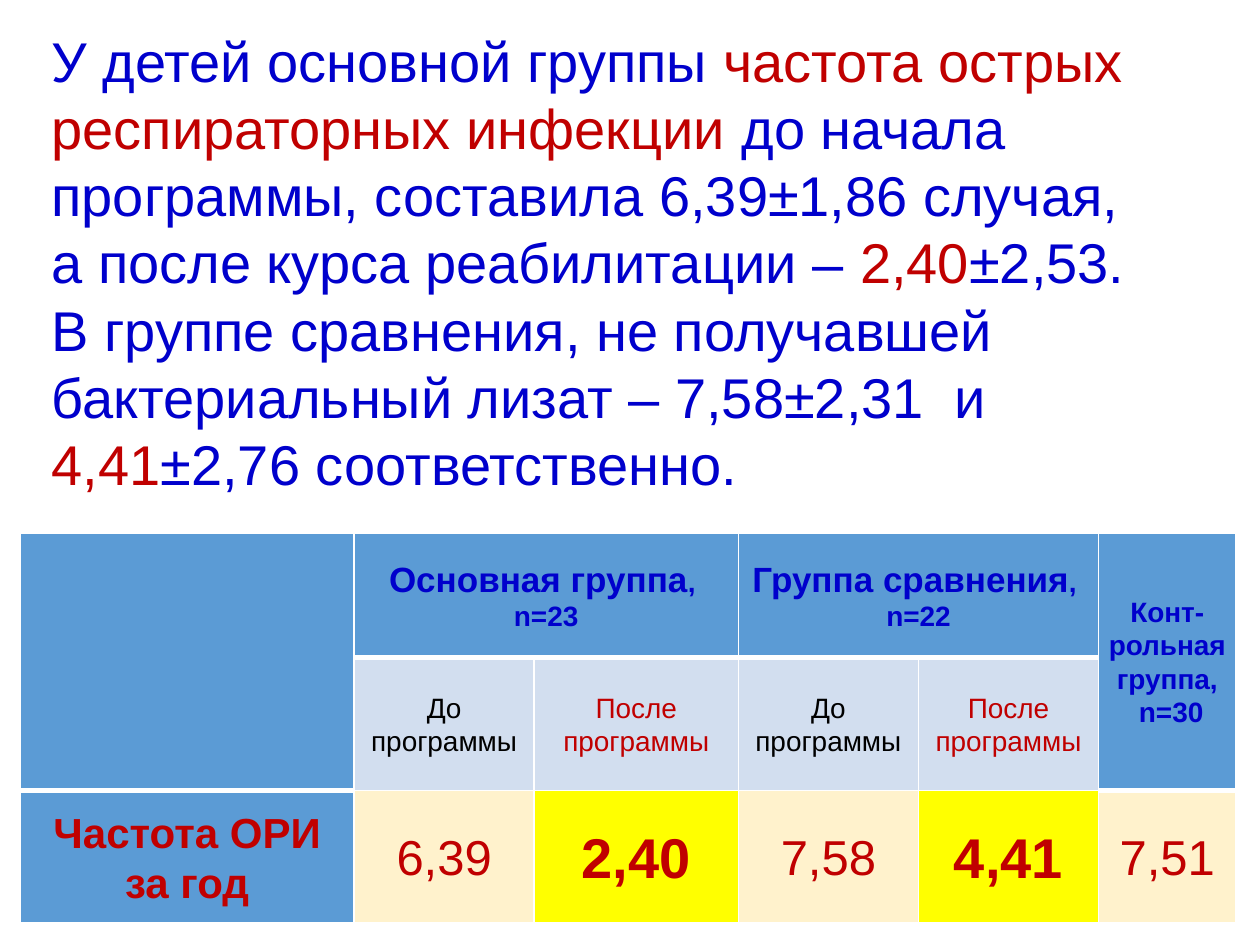
from dataclasses import dataclass

from lxml import etree
from pptx import Presentation
from pptx import util as u
from pptx.dml.color import RGBColor
from pptx.enum import text
from pptx.oxml import ns


@dataclass(frozen=True)
class Theme:
    """Colours, font and type sizes of the slide."""
    font: str = "Arial"
    blue: str = "0000CC"
    red: str = "C00000"
    black: str = "000000"
    white: str = "FFFFFF"
    header: str = "5B9BD5"
    subheader: str = "D2DEEF"
    value: str = "FFF2CC"
    highlight: str = "FFFF00"
    body: int = 32
    strong: int = 32
    number: int = 28
    label: int = 24
    group: int = 20
    small: int = 16


THEME = Theme()


def apply(target, values):
    """Set attributes of an object from a dict."""
    for name, value in values.items():
        setattr(target, name, value)


def add_span(para, words, size, color, bold=False):
    """Add one formatted run to a paragraph."""
    span = para.add_run()
    span.text = words
    apply(span.font, {"name": THEME.font, "size": u.Pt(size), "bold": bold})
    span.font.color.rgb = RGBColor.from_string(color)


def fill_frame(frame, paragraphs, para_format):
    """Write paragraphs, each a list of run arguments, into a text frame."""
    for index, spans in enumerate(paragraphs):
        para = frame.add_paragraph() if index else frame.paragraphs[0]
        apply(para, para_format)
        for span in spans:
            add_span(para, *span)


def add_summary(page):
    """Add the text box with the findings."""
    def blue(words):
        return words, THEME.body, THEME.blue

    def red(words):
        return words, THEME.body, THEME.red

    box = page.shapes.add_textbox(u.Inches(0.31), u.Inches(0.16), u.Inches(9.52), u.Inches(3.87))
    apply(box.text_frame, {"word_wrap": True, "auto_size": text.MSO_AUTO_SIZE.SHAPE_TO_FIT_TEXT})
    fill_frame(box.text_frame, [
        [blue("У детей основной группы "), red("частота острых респираторных инфекции "),
         blue("до начала программы, составила 6,39±1,86 случая,")],
        [blue("а после курса реабилитации – "), red("2,40"), blue("±2,53.")],
        [blue("В группе сравнения, не получавшей бактериальный лизат – 7,58±2,31  и "),
         red("4,41"), blue("±2,76 соответственно.")],
    ], {})


def add_borders(cell, bottom):
    """Draw white borders round a cell, placed before its fill."""
    properties = cell._tc.get_or_add_tcPr()
    for index, side in enumerate("LRTB"):
        width = u.Pt(bottom if side == "B" else 1)
        line = etree.Element(ns.qn(f"a:ln{side}"), w=str(int(width)))
        solid = etree.SubElement(line, ns.qn("a:solidFill"))
        etree.SubElement(solid, ns.qn("a:srgbClr"), val=THEME.white)
        properties.insert(index, line)


def style_cell(cell, fill, bottom=1):
    """Set the fill, margins, anchor and borders of a cell."""
    apply(cell, {"margin_left": u.Inches(0.07), "margin_right": u.Inches(0.07),
                 "margin_top": 0, "margin_bottom": 0,
                 "vertical_anchor": text.MSO_ANCHOR.MIDDLE})
    cell.fill.solid()
    cell.fill.fore_color.rgb = RGBColor.from_string(fill)
    add_borders(cell, bottom)


def write_cell(cell, *paragraphs):
    """Write centred paragraphs into a cell."""
    fill_frame(cell.text_frame, paragraphs,
               {"alignment": text.PP_ALIGN.CENTER, "line_spacing": 1.07})


def add_header(grid):
    """Fill the two header rows and merge their cells."""
    for column in range(6):
        outer = column in (0, 5)
        style_cell(grid.cell(0, column), THEME.header, 3)
        style_cell(grid.cell(1, column), THEME.header if outer else THEME.subheader, 3 if outer else 1)
        if outer:
            grid.cell(0, column).merge(grid.cell(1, column))
    for column, name, count in ((1, "Основная группа", "n=23"), (3, "Группа сравнения", "n=22")):
        grid.cell(0, column).merge(grid.cell(0, column + 1))
        write_cell(grid.cell(0, column),
                   [(name, THEME.group, THEME.blue, True), (", ", THEME.small, THEME.blue, True)],
                   [(count, THEME.small, THEME.blue, True)])
        write_cell(grid.cell(1, column), [("До программы", THEME.small, THEME.black)])
        write_cell(grid.cell(1, column + 1), [("После программы", THEME.small, THEME.red)])
    write_cell(grid.cell(0, 5), [("Конт-рольная группа,", THEME.small, THEME.blue, True)],
               [(" n=30", THEME.small, THEME.blue, True)])


def add_values(grid):
    """Fill the row of frequencies, with the results after the course highlighted."""
    label = (THEME.header, THEME.label, True)
    plain = (THEME.value, THEME.number, False)
    marked = (THEME.highlight, THEME.strong, True)
    row = [("Частота ОРИ за год", label), ("6,39", plain), ("2,40", marked),
           ("7,58", plain), ("4,41", marked), ("7,51", plain)]
    for column, (words, (fill, size, bold)) in enumerate(row):
        style_cell(grid.cell(2, column), fill)
        write_cell(grid.cell(2, column), [(words, size, THEME.red, bold)])


def add_frequency_table(page):
    """Add the table comparing the three groups."""
    frame = page.shapes.add_table(3, 6, u.Inches(0.16), u.Inches(4.23), u.Inches(9.67), u.Inches(2.98))
    grid = frame.table
    for column, width in zip(grid.columns, (2.65, 1.43, 1.62, 1.43, 1.43, 1.09)):
        column.width = u.Inches(width)
    for row, height in zip(grid.rows, (0.99, 0.94, 1.05)):
        row.height = u.Inches(height)
    add_header(grid)
    add_values(grid)


def main():
    """Build the slide and save the deck."""
    deck = Presentation()
    apply(deck, {"slide_width": u.Inches(10), "slide_height": u.Inches(7.5)})
    page = deck.slides.add_slide(deck.slide_layouts[6])
    add_frequency_table(page)
    add_summary(page)
    deck.save("out.pptx")


if __name__ == "__main__":
    main()
